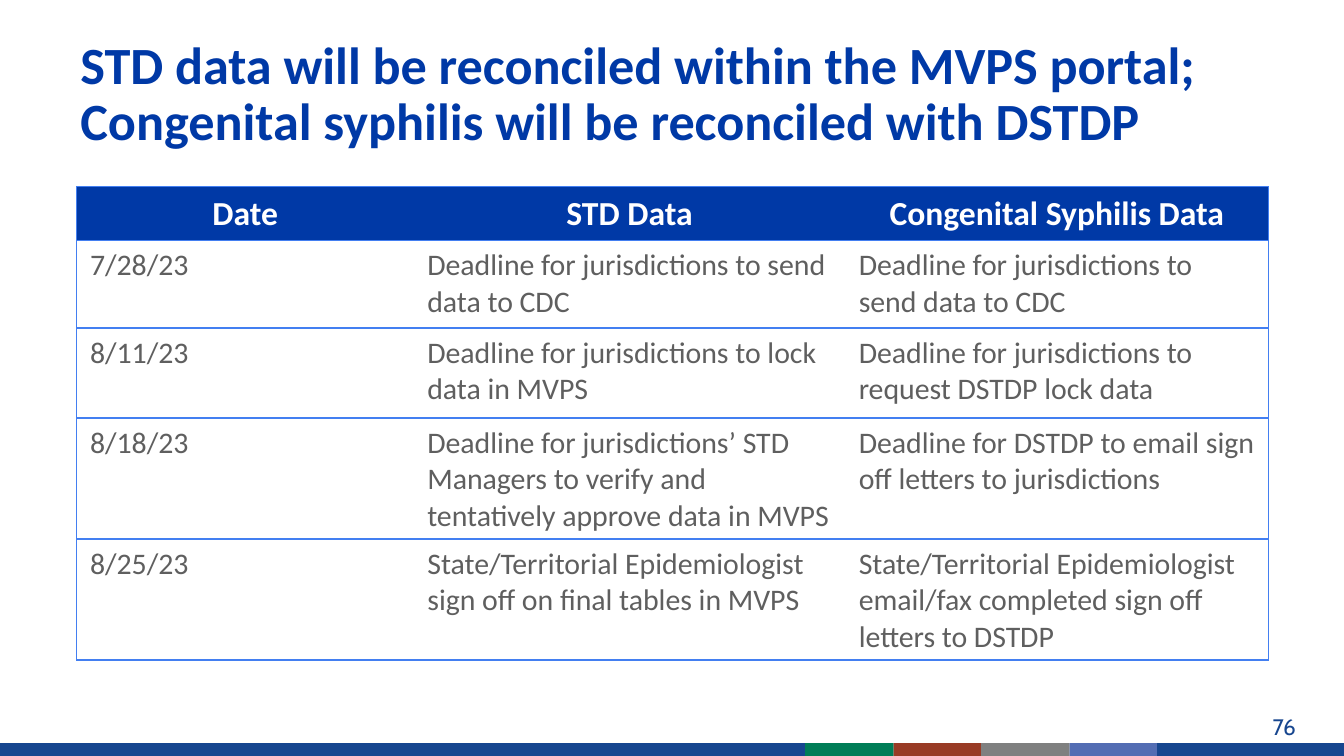
from lxml.etree import SubElement
from pptx import Presentation
from pptx.dml.color import RGBColor
from pptx.enum.shapes import MSO_SHAPE
from pptx.enum.text import MSO_ANCHOR, PP_ALIGN
from pptx.oxml.ns import qn
from pptx.util import Inches, Pt

COLORS = {
    "heading": "0039A6", "body": "5F5F5F", "white": "FFFFFF", "border": "437FF1",
    "navy": "17468F", "green": "007D57", "red": "993B25", "gray": "7F8080",
    "periwinkle": "536DB3",
}


def style_paragraph(paragraph, font_name, size, color, bold=False):
    for run in paragraph.runs:
        run.font.name = font_name
        run.font.size = Pt(size)
        run.font.bold = bold
        run.font.color.rgb = RGBColor.from_string(COLORS[color])


def set_borders(cell, visible):
    """Draw the sides named in visible (letters of L, R, T, B); clear the others."""
    properties = cell._tc.get_or_add_tcPr()
    for side in "LRTB":
        line = SubElement(properties, qn(f"a:ln{side}"), w=str(Pt(0.75)))
        if side in visible:
            fill = SubElement(line, qn("a:solidFill"))
            SubElement(fill, qn("a:srgbClr"), val=COLORS["border"])
        else:
            SubElement(line, qn("a:noFill"))


# Widescreen, 16:9
prs = Presentation()
prs.slide_width = Inches(10)
prs.slide_height = Inches(10 * 9 / 16)
slide = prs.slides.add_slide(prs.slide_layouts[6])

# Footer band
footer_segments = [
    (0, 6.21, "navy"), (5.99, 0.66, "green"), (6.65, 0.66, "red"),
    (7.3, 0.66, "gray"), (7.96, 0.66, "periwinkle"), (8.61, 1.39, "navy"),
]
for left, width, color in footer_segments:
    segment = slide.shapes.add_shape(
        MSO_SHAPE.RECTANGLE, Inches(left), Inches(5.53), Inches(width), Inches(0.1))
    segment.shadow.inherit = False
    segment.fill.solid()
    segment.fill.fore_color.rgb = RGBColor.from_string(COLORS[color])
    segment.line.fill.background()

# Title
title = slide.shapes.add_textbox(Inches(0.5), Inches(0.23), Inches(9), Inches(0.94)).text_frame
title.word_wrap = True
title.vertical_anchor = MSO_ANCHOR.BOTTOM
headline = title.paragraphs[0]
headline.text = ("STD data will be reconciled within the MVPS portal;\n"
                 "Congenital syphilis will be reconciled with DSTDP")
headline.line_spacing = Pt(30)
style_paragraph(headline, "Calibri", 28, "heading", bold=True)

# Page number
page_number = slide.shapes.add_textbox(
    Inches(9.37), Inches(5.26), Inches(0.41), Inches(0.3)).text_frame
page_number.text = "76"
style_paragraph(page_number.paragraphs[0], "Cabin", 12, "navy")

# Reconciliation schedule
schedule_rows = [
    ("Date", "STD Data", "Congenital Syphilis Data"),
    ("7/28/23",
     "Deadline for jurisdictions to send data to CDC",
     "Deadline for jurisdictions to send data to CDC"),
    ("8/11/23",
     "Deadline for jurisdictions to lock data in MVPS",
     "Deadline for jurisdictions to request DSTDP lock data"),
    ("8/18/23",
     "Deadline for jurisdictions’ STD Managers to verify and tentatively approve data in MVPS",
     "Deadline for DSTDP to email sign off letters to jurisdictions"),
    ("8/25/23",
     "State/Territorial Epidemiologist sign off on final tables in MVPS",
     "State/Territorial Epidemiologist email/fax completed sign off letters to DSTDP"),
]
column_widths = [2.51, 3.21, 3.15]
row_heights = [0.4, 0.65, 0.67, 0.9, 0.9]
schedule = slide.shapes.add_table(
    len(row_heights), len(column_widths), Inches(0.57), Inches(1.39),
    Inches(sum(column_widths)), Inches(sum(row_heights))).table
schedule.horz_banding = False
for column, width in zip(schedule.columns, column_widths):
    column.width = Inches(width)
for row, height in zip(schedule.rows, row_heights):
    row.height = Inches(height)

column_borders = ["LTB", "TB", "RTB"]
for row_index, entries in enumerate(schedule_rows):
    for column_index, entry in enumerate(entries):
        cell = schedule.cell(row_index, column_index)
        cell.text_frame.text = entry
        paragraph = cell.text_frame.paragraphs[0]
        set_borders(cell, column_borders[column_index])
        if row_index == 0:
            cell.fill.solid()
            cell.fill.fore_color.rgb = RGBColor.from_string(COLORS["heading"])
            paragraph.alignment = PP_ALIGN.CENTER
            style_paragraph(paragraph, "Calibri", 18, "white", bold=True)
        else:
            cell.fill.background()
            style_paragraph(paragraph, "Calibri", 16, "body")

prs.save("out.pptx")
